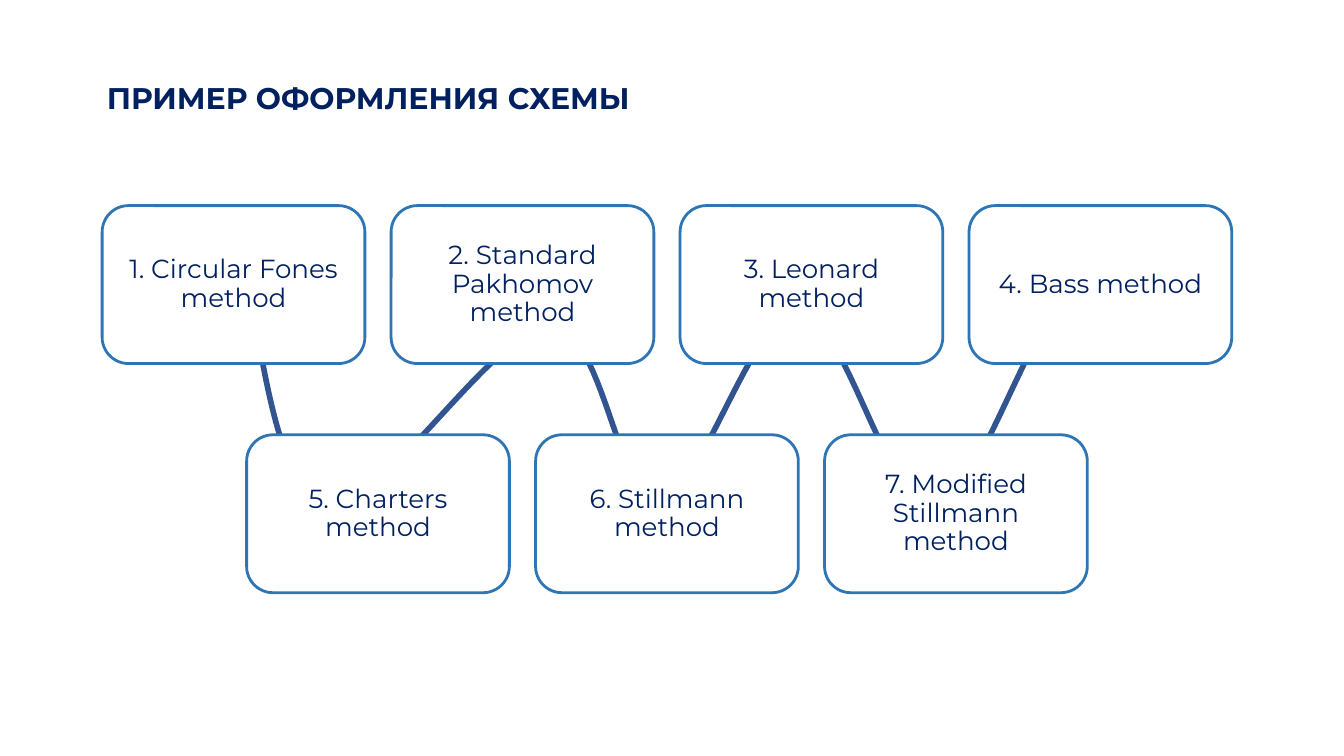
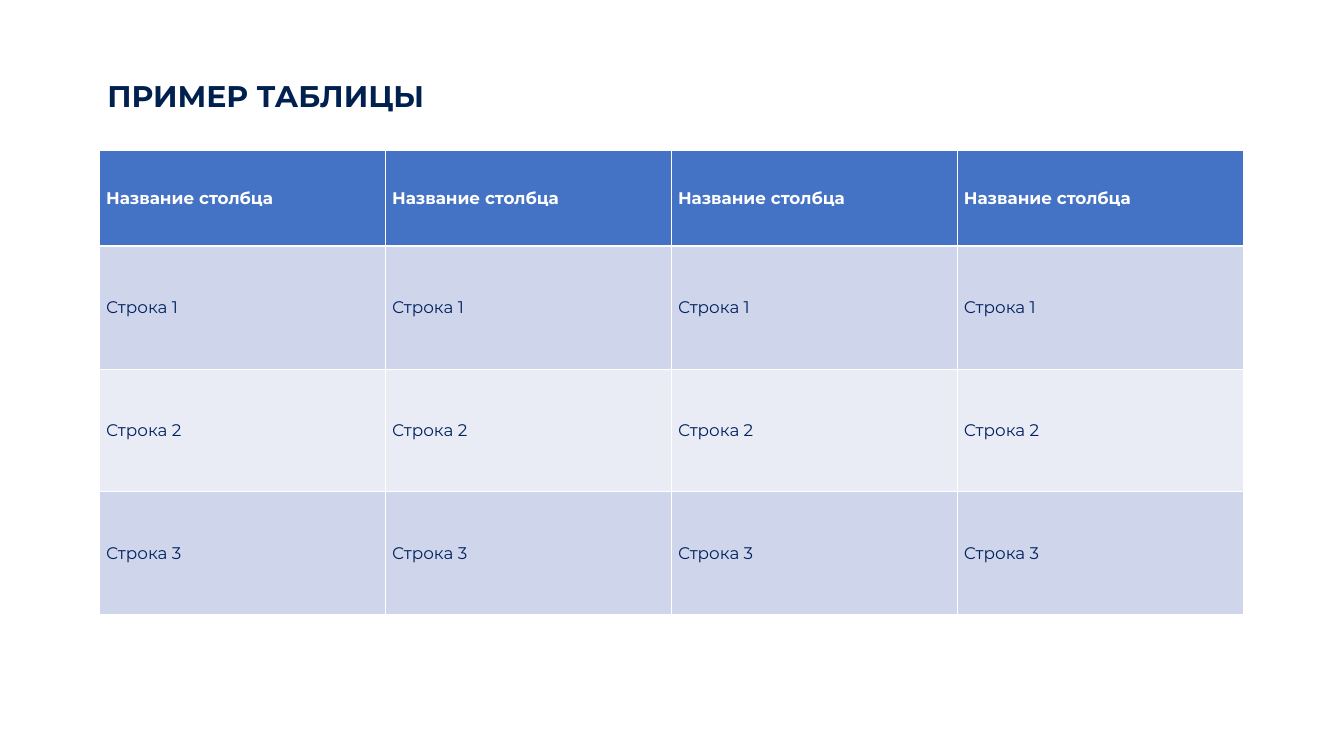
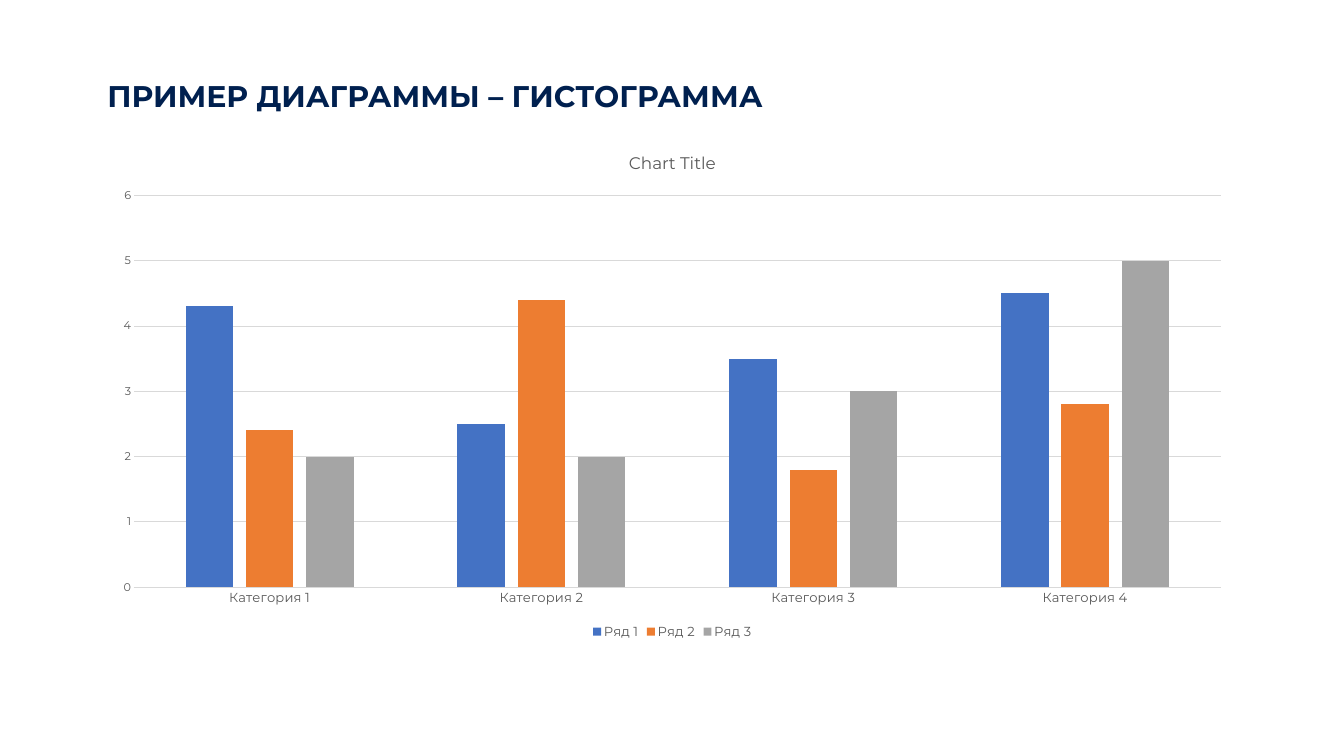
import dataclasses

import lxml.etree
import pptx
import pptx.chart.data
import pptx.dml.color
import pptx.enum.chart
import pptx.enum.shapes
import pptx.enum.text
import pptx.oxml.ns
import pptx.util

Inches = pptx.util.Inches
Pt = pptx.util.Pt
Align = pptx.enum.text.PP_ALIGN
Anchor = pptx.enum.text.MSO_ANCHOR

# Content
SCHEME_TITLE = "ПРИМЕР ОФОРМЛЕНИЯ СХЕМЫ"
METHOD_ROWS = [
    ["1. Circular Fones method", "2. Standard Pakhomov method",
     "3. Leonard method", "4. Bass method"],
    ["5. Charters method", "6. Stillmann method", "7. Modified Stillmann method"],
]
# Wave: start point, then (control, control, end) for each curve
WAVE_START = (3.81, 4.87)
WAVE_CURVES = [
    ((4.05, 6.17), (4.28, 7.48), (5.01, 7.48)),
    ((5.74, 7.48), (7.4, 4.85), (8.19, 4.85)),
    ((8.99, 4.85), (9.19, 7.5), (9.81, 7.46)),
    ((10.42, 7.42), (11.21, 4.61), (11.88, 4.63)),
    ((12.56, 4.65), (13.21, 7.57), (13.88, 7.56)),
    ((14.54, 7.56), (15.46, 4.35), (15.87, 4.61)),
]

TABLE_TITLE = "ПРИМЕР ТАБЛИЦЫ"
COLUMN_COUNT = 4
TABLE_ROWS = ["Название столбца", "Строка 1", "Строка 2", "Строка 3"]

CHART_SLIDE_TITLE = "ПРИМЕР ДИАГРАММЫ – ГИСТОГРАММА"
CHART_TITLE = "Chart Title"
CATEGORIES = ["Категория 1", "Категория 2", "Категория 3", "Категория 4"]
SERIES = [
    ("Ряд 1", (4.3, 2.5, 3.5, 4.5)),
    ("Ряд 2", (2.4, 4.4, 1.8, 2.8)),
    ("Ряд 3", (2, 2, 3, 5)),
]


@dataclasses.dataclass(frozen=True)
class Theme:
    font: str = "Montserrat"
    navy: str = "002060"
    title_navy: str = "00204F"
    white: str = "FFFFFF"
    wave: str = "325491"
    box_line: str = "2E75B6"
    header: str = "4472C4"
    bands: tuple = ("CFD5EA", "E9EBF5")
    series: tuple = ("4472C4", "ED7D31", "A5A5A5")
    grid: str = "D9D9D9"
    chart_text: str = "595959"
    title_size: int = 32
    box_size: int = 28
    table_size: int = 18
    chart_title_size: int = 18
    label_size: int = 14
    value_size: int = 12


THEME = Theme()


# Shared helpers
def rgb(value):
    return pptx.dml.color.RGBColor.from_string(value)


def set_values(target, values):
    for name, value in values.items():
        setattr(target, name, value)


def style_font(font, size, color, bold=False):
    set_values(font, {"name": THEME.font, "size": Pt(size), "bold": bold})
    font.color.rgb = rgb(color)


def style_line(line, color, width):
    line.color.rgb = rgb(color)
    line.width = Pt(width)


def write_text(frame, text, size, color, bold=False, **paragraph_values):
    paragraph = frame.paragraphs[0]
    set_values(paragraph, paragraph_values)
    run = paragraph.add_run()
    run.text = text
    style_font(run.font, size, color, bold)


def add_slide(presentation, title, left=1.5, width=17.28,
              color=THEME.title_navy, line_spacing=0.9):
    slide = presentation.slides.add_slide(presentation.slide_layouts[6])
    slide.background.fill.solid()
    slide.background.fill.fore_color.rgb = rgb(THEME.white)
    frame = slide.shapes.add_textbox(
        Inches(left), Inches(0.9), Inches(width), Inches(1.1)).text_frame
    set_values(frame, {"word_wrap": True, "vertical_anchor": Anchor.MIDDLE})
    write_text(frame, title, THEME.title_size, color, True, line_spacing=line_spacing)
    return slide


# Scheme
def wave_points(steps=24):
    start = WAVE_START
    for first, second, end in WAVE_CURVES:
        for step in range(1, steps + 1):
            t = step / steps
            weights = ((1 - t) ** 3, 3 * t * (1 - t) ** 2, 3 * t * t * (1 - t), t ** 3)
            corners = (start, first, second, end)
            yield tuple(Inches(sum(w * corner[axis] for w, corner in zip(weights, corners)))
                        for axis in (0, 1))
        start = end


def add_wave(slide):
    builder = slide.shapes.build_freeform(*(Inches(value) for value in WAVE_START))
    builder.add_line_segments(list(wave_points()), close=False)
    wave = builder.convert_to_shape()
    wave.shadow.inherit = False
    wave.fill.background()
    style_line(wave.line, THEME.wave, 6)


def add_method(slide, text, left, top, width, height):
    box = slide.shapes.add_shape(
        pptx.enum.shapes.MSO_SHAPE.ROUNDED_RECTANGLE,
        Inches(left), Inches(top), Inches(width), Inches(height))
    box.shadow.inherit = False
    box.fill.solid()
    box.fill.fore_color.rgb = rgb(THEME.white)
    style_line(box.line, THEME.box_line, 3)
    margins = {f"margin_{side}": Inches(0.12) for side in ("left", "right", "top", "bottom")}
    set_values(box.text_frame,
               {"word_wrap": True, "vertical_anchor": Anchor.MIDDLE, **margins})
    write_text(box.text_frame, text, THEME.box_size, THEME.navy,
               alignment=Align.CENTER, line_spacing=0.9)


def build_scheme(presentation):
    slide = add_slide(presentation, SCHEME_TITLE, 1.49, 13.69, THEME.navy, 1.0)
    add_wave(slide)
    left, top, width, height = 1.52, 3.06, 3.91, 2.35
    column_step, row_step = 4.3, 3.41
    for row, methods in enumerate(METHOD_ROWS):
        for column, text in enumerate(methods):
            # The second row is shifted by half a step
            add_method(slide, text, left + (column + row / 2) * column_step,
                       top + row * row_step, width, height)


# Table
def add_borders(cell, widths):
    properties = cell._tc.get_or_add_tcPr()
    for side in "LRTB":
        line = lxml.etree.SubElement(properties, pptx.oxml.ns.qn(f"a:ln{side}"),
                                     w=str(Pt(widths.get(side, 1))))
        fill = lxml.etree.SubElement(line, pptx.oxml.ns.qn("a:solidFill"))
        lxml.etree.SubElement(fill, pptx.oxml.ns.qn("a:srgbClr"), val=THEME.white)


def build_table(presentation):
    slide = add_slide(presentation, TABLE_TITLE)
    heights = [1.42] + [1.83] * (len(TABLE_ROWS) - 1)
    table = slide.shapes.add_table(
        len(TABLE_ROWS), COLUMN_COUNT, Inches(1.48), Inches(2.24),
        Inches(17.02), Inches(sum(heights))).table
    for row, (text, height) in enumerate(zip(TABLE_ROWS, heights)):
        table.rows[row].height = Inches(height)
        is_header = row == 0
        fill = THEME.header if is_header else THEME.bands[(row - 1) % 2]
        color = THEME.white if is_header else THEME.navy
        thick = {0: {"B": 3}, 1: {"T": 3}}.get(row, {})
        for cell in table.rows[row].cells:
            add_borders(cell, thick)
            cell.fill.solid()
            cell.fill.fore_color.rgb = rgb(fill)
            cell.vertical_anchor = Anchor.MIDDLE
            write_text(cell.text_frame, text, THEME.table_size, color, is_header)


# Chart
def build_chart(presentation):
    slide = add_slide(presentation, CHART_SLIDE_TITLE)
    data = pptx.chart.data.CategoryChartData()
    data.categories = CATEGORIES
    for name, values in SERIES:
        data.add_series(name, values)
    chart = slide.shapes.add_chart(
        pptx.enum.chart.XL_CHART_TYPE.COLUMN_CLUSTERED,
        Inches(1.5), Inches(2), Inches(17.01), Inches(7.56), data).chart
    style_font(chart.font, THEME.label_size, THEME.chart_text)

    write_text(chart.chart_title.text_frame, CHART_TITLE,
               THEME.chart_title_size, THEME.chart_text)
    chart.chart_title.include_in_layout = False
    chart.has_legend = True
    set_values(chart.legend, {"position": pptx.enum.chart.XL_LEGEND_POSITION.BOTTOM,
                              "include_in_layout": False})
    style_font(chart.legend.font, THEME.label_size, THEME.chart_text)

    plot = chart.plots[0]
    set_values(plot, {"gap_width": 219, "overlap": -27, "vary_by_categories": False})
    for series, color in zip(plot.series, THEME.series):
        series.format.fill.solid()
        series.format.fill.fore_color.rgb = rgb(color)

    no_tick = pptx.enum.chart.XL_TICK_MARK.NONE
    for axis, size in ((chart.category_axis, THEME.label_size),
                       (chart.value_axis, THEME.value_size)):
        set_values(axis, {"major_tick_mark": no_tick, "minor_tick_mark": no_tick})
        style_font(axis.tick_labels.font, size, THEME.chart_text)
    style_line(chart.category_axis.format.line, THEME.grid, 0.75)
    set_values(chart.value_axis, {"minimum_scale": 0, "maximum_scale": 6, "major_unit": 1})
    chart.value_axis.format.line.fill.background()
    style_line(chart.value_axis.major_gridlines.format.line, THEME.grid, 0.75)


def main():
    presentation = pptx.Presentation()
    set_values(presentation, {"slide_width": Inches(20), "slide_height": Inches(11.25)})
    for build in (build_scheme, build_table, build_chart):
        build(presentation)
    presentation.save("out.pptx")


if __name__ == "__main__":
    main()
